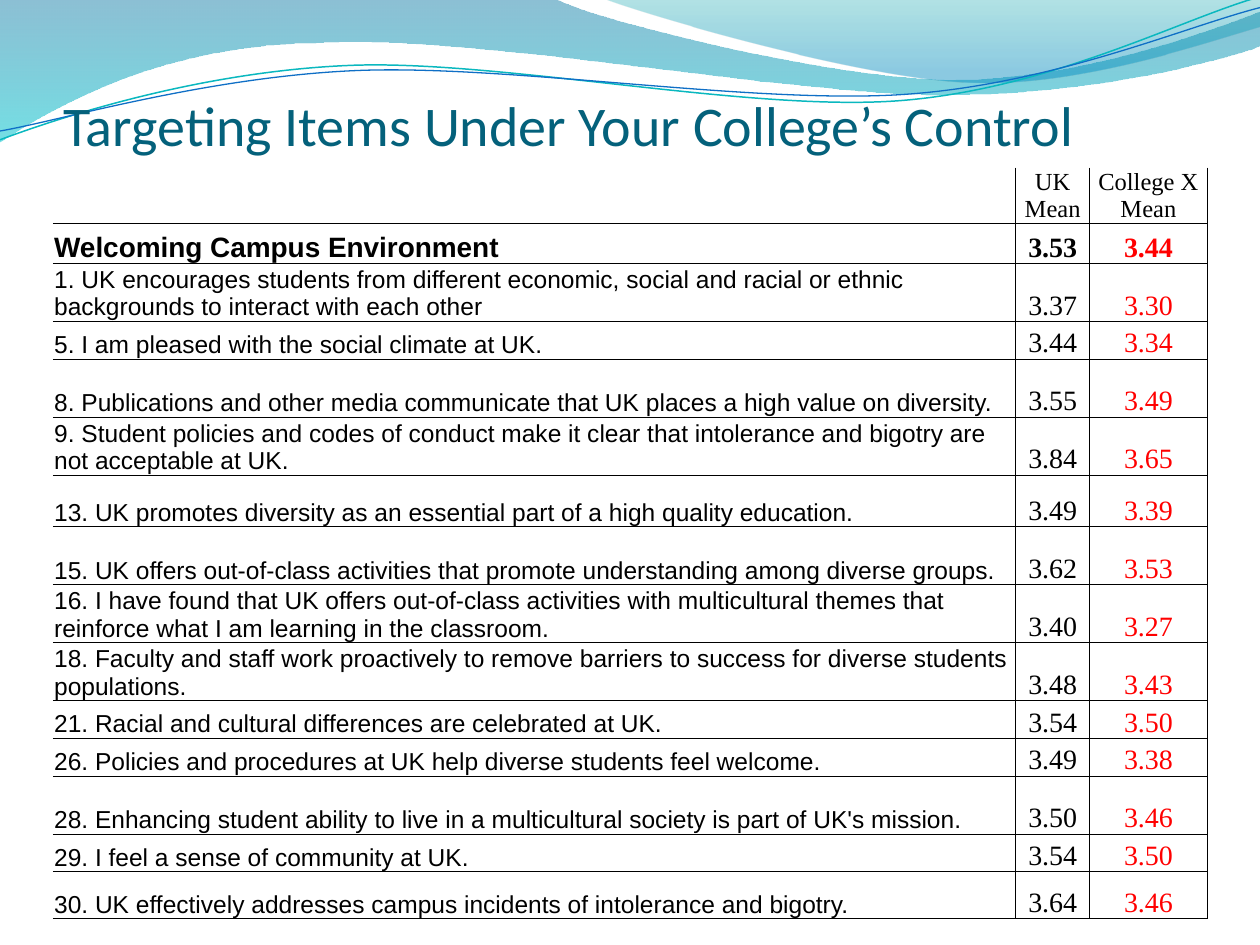
import math

from lxml import etree
from pptx import Presentation
from pptx.dml.color import RGBColor
from pptx.enum.text import MSO_ANCHOR, MSO_AUTO_SIZE, PP_ALIGN
from pptx.oxml.ns import qn
from pptx.util import Inches, Pt

BOTTOM = MSO_ANCHOR.BOTTOM
NO_AUTOFIT = MSO_AUTO_SIZE.NONE
LEFT = PP_ALIGN.LEFT
CENTER = PP_ALIGN.CENTER

BLACK = RGBColor(0x00, 0x00, 0x00)
WHITE = RGBColor(0xFF, 0xFF, 0xFF)
RED = RGBColor(0xFF, 0x00, 0x00)
TITLE_TEAL = RGBColor(0x04, 0x61, 0x7B)
DEEP_BLUE = RGBColor(0x00, 0x74, 0xA1)
AQUA = RGBColor(0x00, 0xC6, 0xCF)
SEA_GREEN = RGBColor(0x00, 0xA1, 0xA9)
SKY_BLUE = RGBColor(0x00, 0x8B, 0xBF)
LINE_TEAL = RGBColor(0x0A, 0xB8, 0xBF)
LINE_BLUE = RGBColor(0x0F, 0x6F, 0xC6)

WAVE_ROTATION = 357.3

WIDE_BAND_BOX = (-0.01, -0.01, 10.02, 1.14)
WIDE_BAND = [
    (0, -0.01), (4.4, -0.01),
    (4.76, 0.17, 6.64, 0.63, 7.58, 0.63), (8.53, 0.63, 9.58, 0.26, 10, 0.09),
    (10.01, 0.36),
    (9.83, 0.44, 8.7, 0.76, 7.46, 0.75), (6.22, 0.75, 3.82, 0.28, 2.57, 0.34),
    (1.29, 0.35, 0.46, 0.83, -0.01, 1.13), (0, -0.01),
]
RIGHT_BAND_BOX = (4.79, -0.01, 5.21, 0.7)
RIGHT_BAND = [
    (4.79, -0.01),
    (5.09, 0.11, 6.82, 0.62, 7.69, 0.65), (8.56, 0.69, 9.61, 0.32, 10, 0.21),
    (10, 0), (4.79, -0.01),
]
TEAL_WAVE_BOX = (-0.02, 0.22, 10.02, 0.71)
TEAL_WAVE = [
    (0, 1.11),
    (0.48, 0.93, 1.58, 0.57, 2.77, 0.52), (3.95, 0.47, 5.93, 0.89, 7.13, 0.8),
    (8.33, 0.71, 9.38, 0.15, 9.98, -0.02),
]
BLUE_WAVE_BOX = (-0.02, 0.3, 10.03, 0.58)
BLUE_WAVE = [
    (0, 1.04),
    (0.47, 0.96, 1.64, 0.61, 2.83, 0.56), (4.03, 0.51, 5.97, 0.83, 7.17, 0.75),
    (8.36, 0.67, 9.41, 0.21, 10, 0.06),
]

COLUMN_WIDTHS = [7.64, 0.59, 0.93]
SURVEY_ROWS = [
    (0.44, "", "UK Mean", "College X Mean"),
    (0.32, "Welcoming Campus Environment", "3.53", "3.44"),
    (0.46, "1. UK encourages students from different economic, social and racial or ethnic "
           "backgrounds to interact with each other", "3.37", "3.30"),
    (0.3, "5. I am pleased with the social climate at UK.", "3.44", "3.34"),
    (0.46, "8. Publications and other media communicate that UK places a high value on diversity.",
     "3.55", "3.49"),
    (0.46, "9. Student policies and codes of conduct make it clear that intolerance and bigotry "
           "are not acceptable at UK.", "3.84", "3.65"),
    (0.41, "13. UK promotes diversity as an essential part of a high quality education.",
     "3.49", "3.39"),
    (0.46, "15. UK offers out-of-class activities that promote understanding among diverse groups.",
     "3.62", "3.53"),
    (0.46, "16. I have found that UK offers out-of-class activities with multicultural themes "
           "that reinforce what I am learning in the classroom.", "3.40", "3.27"),
    (0.46, "18. Faculty and staff work proactively to remove barriers to success for diverse "
           "students populations.", "3.48", "3.43"),
    (0.3, "21. Racial and cultural differences are celebrated at UK.", "3.54", "3.50"),
    (0.3, "26. Policies and procedures at UK help diverse students feel welcome.", "3.49", "3.38"),
    (0.46, "28. Enhancing student ability to live in a multicultural society is part of UK's "
           "mission.", "3.50", "3.46"),
    (0.3, "29. I feel a sense of community at UK.", "3.54", "3.50"),
    (0.37, "30. UK effectively addresses campus incidents of intolerance and bigotry.",
     "3.64", "3.46"),
]


def set_attributes(target, values):
    for name, value in values.items():
        setattr(target, name, value)


def place_in_box(x, y, box, rotation):
    left, top, width, height = box
    angle = math.radians(-rotation)
    dx, dy = x - left - width / 2, y - top - height / 2
    return (Inches(width / 2 + dx * math.cos(angle) - dy * math.sin(angle)),
            Inches(height / 2 + dx * math.sin(angle) + dy * math.cos(angle)))


class SlideBuilder:
    title_font = {"name": "Calibri", "size": Pt(32), "bold": False}
    item_font = {"name": "Arial", "size": Pt(14), "bold": False}
    header_font = {"name": "Times New Roman", "size": Pt(14), "bold": False}
    value_font = {"name": "Times New Roman", "size": Pt(16), "bold": False}
    cell_format = {"vertical_anchor": BOTTOM, "margin_left": Inches(0.01),
                   "margin_right": Inches(0.01), "margin_top": Inches(0.01), "margin_bottom": 0}
    border_width = Pt(0.5)

    def __init__(self, presentation):
        self.slide = presentation.slides.add_slide(presentation.slide_layouts[5])

    def add_freeform(self, outline, box, closed, rotation=0):
        segments = [[place_in_box(*step[i:i + 2], box, rotation) for i in range(0, len(step), 2)]
                    for step in outline]
        anchors = [segment[-1] for segment in segments]
        builder = self.slide.shapes.build_freeform(*anchors[0], scale=1.0)
        builder.add_line_segments(anchors[1:], close=closed)
        shape = builder.convert_to_shape()
        left, top, width, height = (Inches(value) for value in box)
        set_attributes(shape, {"left": left, "top": top, "width": width, "height": height,
                               "rotation": rotation})
        shape.shadow.inherit = False
        outline_element = next(shape.element.iter(qn("a:path")))
        outline_element.set("w", str(width))
        outline_element.set("h", str(height))
        for command, points in zip(outline_element, segments):
            if len(points) == 3:
                command = self.replace_with_curve(command)
            for point in list(command):
                command.remove(point)
            for x, y in points:
                etree.SubElement(command, qn("a:pt"), x=str(x), y=str(y))
        return shape

    def replace_with_curve(self, command):
        curve = etree.Element(qn("a:cubicBezTo"))
        command.getparent().replace(command, curve)
        return curve

    def add_band(self, outline, box, stops):
        shape = self.add_freeform(outline, box, True)
        shape.line.fill.background()
        shape.fill.gradient()
        shape.fill.gradient_angle = 270
        for stop, (position, color, _) in zip(shape.fill.gradient_stops, stops):
            stop.position = position
            stop.color.rgb = color
        for color_element, (_, _, opacity) in zip(shape.element.iter(qn("a:srgbClr")), stops):
            etree.SubElement(color_element, qn("a:alpha"), val=str(opacity * 1000))

    def add_wave(self, outline, box, color, width):
        shape = self.add_freeform(outline, box, False, WAVE_ROTATION)
        shape.fill.background()
        shape.line.color.rgb = color
        shape.line.width = Pt(width)

    def add_title(self, text):
        title = self.slide.shapes.title
        title.element.getparent().append(title.element)
        set_attributes(title, {"left": Inches(0.5), "top": Inches(0.33),
                               "width": Inches(9.08), "height": Inches(0.92)})
        frame = title.text_frame
        set_attributes(frame, {"text": text, "vertical_anchor": BOTTOM, "word_wrap": True,
                               "auto_size": NO_AUTOFIT, "margin_left": 0, "margin_right": 0,
                               "margin_top": Inches(0.05), "margin_bottom": 0})
        self.format_paragraph(frame.paragraphs[0], self.title_font, TITLE_TEAL, LEFT)

    def format_paragraph(self, paragraph, font, color, alignment):
        paragraph.alignment = alignment
        for target in (paragraph, *paragraph.runs):
            set_attributes(target.font, font)
            target.font.color.rgb = color

    def add_borders(self, cell, hidden_sides):
        properties = cell._tc.get_or_add_tcPr()
        for side in "LRTB":
            border = etree.SubElement(properties, qn(f"a:ln{side}"), w=str(self.border_width))
            if side in hidden_sides:
                etree.SubElement(border, qn("a:noFill"))
            else:
                fill = etree.SubElement(border, qn("a:solidFill"))
                etree.SubElement(fill, qn("a:srgbClr"), val=str(BLACK))

    def add_survey_table(self, rows, widths):
        frame = self.slide.shapes.add_table(
            len(rows), len(widths), Inches(0.42), Inches(1.33),
            Inches(sum(widths)), Inches(sum(row[0] for row in rows)))
        table = frame.table
        set_attributes(table, {"first_row": False, "horz_banding": False})
        for column, width in zip(table.columns, widths):
            column.width = Inches(width)
        for row_index, (height, *texts) in enumerate(rows):
            table.rows[row_index].height = Inches(height)
            for column_index, text in enumerate(texts):
                self.fill_cell(table.cell(row_index, column_index), text, row_index, column_index)

    def fill_cell(self, cell, text, row_index, column_index):
        set_attributes(cell, {"text": text, **self.cell_format})
        hidden_sides = ("T" if row_index == 0 else "") + ("L" if column_index == 0 else "")
        self.add_borders(cell, hidden_sides)
        if row_index > 0 and column_index == 0:
            cell.fill.background()
        else:
            cell.fill.solid()
            cell.fill.fore_color.rgb = WHITE
        font = self.item_font if column_index == 0 else self.value_font
        if row_index == 0:
            font = self.header_font
        elif row_index == 1:
            font = {**font, "size": Pt(16), "bold": True}
        color = RED if row_index > 0 and column_index == 2 else BLACK
        alignment = LEFT if column_index == 0 else CENTER
        self.format_paragraph(cell.text_frame.paragraphs[0], font, color, alignment)


def main():
    presentation = Presentation()
    set_attributes(presentation, {"slide_width": Inches(10), "slide_height": Inches(7.5)})
    builder = SlideBuilder(presentation)
    builder.add_band(WIDE_BAND, WIDE_BAND_BOX, [(0, DEEP_BLUE, 45), (1, AQUA, 55)])
    builder.add_band(RIGHT_BAND, RIGHT_BAND_BOX, [(0, SEA_GREEN, 30), (0.8, SKY_BLUE, 45)])
    builder.add_wave(TEAL_WAVE, TEAL_WAVE_BOX, LINE_TEAL, 0.85)
    builder.add_wave(BLUE_WAVE, BLUE_WAVE_BOX, LINE_BLUE, 0.75)
    builder.add_title("Targeting Items Under Your College’s Control")
    builder.add_survey_table(SURVEY_ROWS, COLUMN_WIDTHS)
    presentation.save("out.pptx")


if __name__ == "__main__":
    main()
